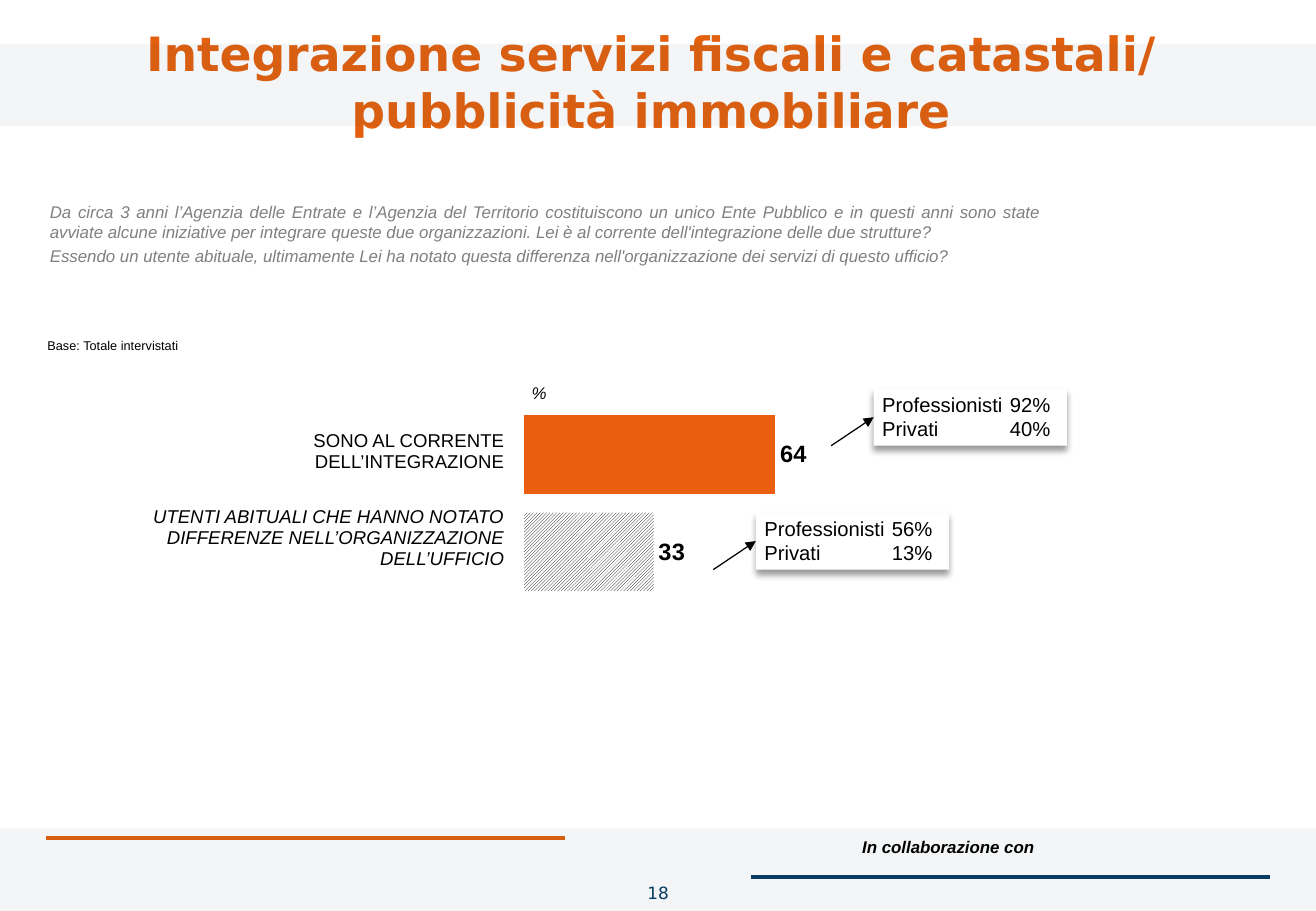
from dataclasses import dataclass

from lxml import etree
from pptx import Presentation
from pptx.chart.data import CategoryChartData
from pptx.dml.color import RGBColor
from pptx.enum.chart import XL_CHART_TYPE, XL_LABEL_POSITION
from pptx.enum.dml import MSO_PATTERN
from pptx.enum.shapes import MSO_CONNECTOR, MSO_SHAPE
from pptx.enum.text import MSO_ANCHOR, MSO_AUTO_SIZE, PP_ALIGN
from pptx.oxml import parse_xml
from pptx.oxml.ns import nsdecls, qn
from pptx.util import Inches, Pt

LEFT, CENTER = PP_ALIGN.LEFT, PP_ALIGN.CENTER
RIGHT, JUSTIFY = PP_ALIGN.RIGHT, PP_ALIGN.JUSTIFY
TOP, MIDDLE = MSO_ANCHOR.TOP, MSO_ANCHOR.MIDDLE
NO_AUTOSIZE = MSO_AUTO_SIZE.NONE
RECTANGLE, STRAIGHT = MSO_SHAPE.RECTANGLE, MSO_CONNECTOR.STRAIGHT
BAR_CLUSTERED = XL_CHART_TYPE.BAR_CLUSTERED
OUTSIDE_END = XL_LABEL_POSITION.OUTSIDE_END
DIAGONAL = MSO_PATTERN.DARK_UPWARD_DIAGONAL
LEFT_SIDE = 1


@dataclass(frozen=True)
class Theme:
    orange: str = "E3600F"
    bar: str = "E95E0F"
    navy: str = "073C62"
    band: str = "1E3D5C"
    grey: str = "808080"
    black: str = "000000"
    white: str = "FFFFFF"
    head_font: str = "DejaVu Sans"
    body_font: str = "Arial"
    title: float = 28
    value: float = 14
    callout: float = 12
    label: float = 11
    body: float = 10
    note: float = 7.5


def rgb(color):
    return RGBColor.from_string(color)


class SlideBuilder:
    def __init__(self, slide, theme):
        self.s = slide
        self.theme = theme

    def style(self, font, size, color=None, name=None, bold=False, italic=False):
        font.size = Pt(size)
        font.name = name or self.theme.body_font
        font.color.rgb = rgb(color or self.theme.black)
        font.bold, font.italic = bold, italic

    def put_text(self, tf, text, size, align=LEFT, anchor=TOP,
                 inset=(0.09, 0.04), **look):
        tf.text = text
        tf.word_wrap = True
        tf.auto_size = NO_AUTOSIZE
        tf.vertical_anchor = anchor
        tf.margin_left = tf.margin_right = Inches(inset[0])
        tf.margin_top = tf.margin_bottom = Inches(inset[1])
        for p in tf.paragraphs:
            p.alignment = align
            for r in p.runs:
                self.style(r.font, size, **look)

    def title(self, box, text):
        sp = self.s.shapes.title
        sp.left, sp.top, sp.width, sp.height = map(Inches, box)
        self.put_text(sp.text_frame, text, self.theme.title, CENTER, MIDDLE,
                      color=self.theme.orange, name=self.theme.head_font, bold=True)

    def text(self, box, text, size, align=LEFT, **look):
        sp = self.s.shapes.add_textbox(*map(Inches, box))
        self.put_text(sp.text_frame, text, size, align, **look)
        return sp.text_frame

    def rect(self, box, color):
        sp = self.s.shapes.add_shape(RECTANGLE, *map(Inches, box))
        sp.shadow.inherit = False
        sp.fill.solid()
        sp.fill.fore_color.rgb = rgb(color)
        sp.line.fill.background()
        return sp

    def band(self, top):
        sp = self.rect((0, top, 10.83, 0.68), self.theme.band)
        color = sp._element.spPr.find(qn("a:solidFill"))[0]
        etree.SubElement(color, qn("a:alpha"), val="5000")

    def line(self, start, end, color, width):
        cx = self.s.shapes.add_connector(STRAIGHT, *map(Inches, start + end))
        cx.line.color.rgb = rgb(color)
        cx.line.width = Pt(width)
        etree.SubElement(cx._element.spPr, qn("a:effectLst"))
        return cx

    def callout(self, left, top, rows):
        width, height = 1.59, 0.47
        sp = self.rect((left, top, width, height), self.theme.white)
        effects = sp._element.spPr.find(qn("a:effectLst"))
        effects.append(parse_xml(
            f'<a:outerShdw {nsdecls("a")} blurRad="{Pt(4)}" dist="{Pt(3)}" '
            f'dir="5400000" algn="t" rotWithShape="0">'
            f'<a:srgbClr val="{self.theme.black}"><a:alpha val="40000"/>'
            f'</a:srgbClr></a:outerShdw>'))
        text = "\n".join(f"{who}\t{share}" for who, share in rows)
        self.put_text(sp.text_frame, text, self.theme.callout, inset=(0.07, 0.03))
        for p in sp.text_frame.paragraphs:
            tabs = etree.SubElement(p._p.get_or_add_pPr(), qn("a:tabLst"))
            etree.SubElement(tabs, qn("a:tab"), pos=str(Inches(1.05)), algn="l")
        # Arrow rising to the middle of the left side
        cx = self.line((left - 0.35, top + height), (left, top + height / 2),
                       self.theme.black, 0.75)
        cx.end_connect(sp, LEFT_SIDE)
        ln = cx._element.spPr.find(qn("a:ln"))
        etree.SubElement(ln, qn("a:tailEnd"), type="triangle")

    def labels(self, box, rows):
        left, top, width, height = map(Inches, box)
        table = self.s.shapes.add_table(len(rows), 1, left, top, width, height).table
        table.first_row = table.horz_banding = False
        for i, (text, row_height, italic) in enumerate(rows):
            table.rows[i].height = Inches(row_height)
            cell = table.cell(i, 0)
            cell.fill.background()
            cell.vertical_anchor = MIDDLE
            cell.margin_left = cell.margin_right = cell.margin_top = Inches(0.01)
            cell.margin_bottom = 0
            cell.text = text
            p = cell.text_frame.paragraphs[0]
            p.alignment = RIGHT
            self.style(p.runs[0].font, self.theme.label, italic=italic)

    def bar_chart(self, box, values, plot):
        data = CategoryChartData(number_format="0")
        data.categories = [str(i + 1) for i in range(len(values))]
        data.add_series("Series 1", values)
        chart = self.s.shapes.add_chart(BAR_CLUSTERED, *map(Inches, box), data).chart
        chart.has_legend = chart.has_title = False
        self.style(chart.font, 18, name=self.theme.head_font)
        chart.category_axis.reverse_order = True
        chart.category_axis.visible = False
        axis = chart.value_axis
        axis.minimum_scale, axis.maximum_scale, axis.major_unit = 0, 100, 10
        axis.has_major_gridlines = False
        axis.visible = False
        bars = chart.plots[0]
        bars.gap_width = 24
        bars.vary_by_categories = False
        # Solid bar, then a hatched one
        series = bars.series[0]
        series.format.fill.solid()
        series.format.fill.fore_color.rgb = rgb(self.theme.bar)
        fill = series.points[1].format.fill
        fill.patterned()
        fill.pattern = DIAGONAL
        fill.fore_color.rgb = rgb(self.theme.black)
        fill.back_color.rgb = rgb(self.theme.white)
        labels = series.data_labels
        labels.show_value = True
        labels.number_format, labels.number_format_is_linked = "0", False
        labels.position = OUTSIDE_END
        self.style(labels.font, self.theme.value, bold=True)
        # Fixed inner plot area
        area = chart._chartSpace.chart.plotArea
        for old in area.findall(qn("c:layout")):
            area.remove(old)
        sizes = "".join(f'<c:{k} val="{v}"/>' for k, v in zip("xywh", plot))
        area.insert(0, parse_xml(
            f'<c:layout {nsdecls("c")}><c:manualLayout><c:layoutTarget val="inner"/>'
            f'<c:xMode val="edge"/><c:yMode val="edge"/>{sizes}'
            f'</c:manualLayout></c:layout>'))


def main():
    prs = Presentation()
    prs.slide_width, prs.slide_height = Inches(10.83), Inches(7.5)
    t = Theme()
    b = SlideBuilder(prs.slides.add_slide(prs.slide_layouts[5]), t)

    # Frame and title
    b.line((0.38, 6.9), (4.65, 6.9), t.orange, 2)
    b.line((6.18, 7.22), (10.45, 7.22), t.navy, 2)
    for top in (6.82, 0.36):
        b.band(top)
    b.text((6.55, 6.85, 2.05, 0.26), "In collaborazione con", t.body, RIGHT,
           bold=True, italic=True)
    b.title((-0.06, 0.04, 10.83, 1.25),
            "Integrazione servizi fiscali e catastali/\vpubblicità immobiliare")
    b.text((4.94, 7.22, 0.95, 0.28), "18", t.body, CENTER, inset=(0.1, 0.05),
           color=t.navy, name=t.head_font)

    # Survey question and base
    tf = b.text(
        (0.32, 1.62, 8.32, 0.47),
        "Da circa 3 anni l’Agenzia delle Entrate e l’Agenzia del Territorio "
        "costituiscono un unico Ente Pubblico e in questi anni sono state avviate "
        "alcune iniziative per integrare queste due organizzazioni. Lei è al "
        "corrente dell'integrazione delle due strutture?\n"
        "Essendo un utente abituale, ultimamente Lei ha notato questa differenza "
        "nell'organizzazione dei servizi di questo ufficio?",
        t.body, JUSTIFY, color=t.grey, italic=True)
    tf.paragraphs[1].space_before = Pt(2)
    tf = b.text((0.31, 2.68, 2.42, 0.2), "Base: Totale intervistati", t.note,
                JUSTIFY, inset=(0.08, 0.04))
    tf.paragraphs[0].line_spacing = 1.5

    # Bar chart with its labels
    b.text((4.24, 3.15, 0.39, 0.17), "%", t.body, CENTER, anchor=MIDDLE,
           inset=(0, 0), italic=True)
    b.bar_chart((2.98, 3.32, 6.51, 1.77), (64, 33), (0.205, 0.013, 0.496, 0.905))
    b.labels((0.97, 3.4, 3.19, 1.42), [
        ("SONO AL CORRENTE DELL’INTEGRAZIONE", 0.63, False),
        ("UTENTI ABITUALI CHE HANNO NOTATO DIFFERENZE NELL’ORGANIZZAZIONE "
         "DELL’UFFICIO", 0.79, True)])

    # Callouts by type of user
    for left, top, professionals, private in ((7.19, 3.2, "92%", "40%"),
                                              (6.22, 4.22, "56%", "13%")):
        b.callout(left, top, [("Professionisti", professionals), ("Privati", private)])

    prs.save("out.pptx")


if __name__ == "__main__":
    main()
